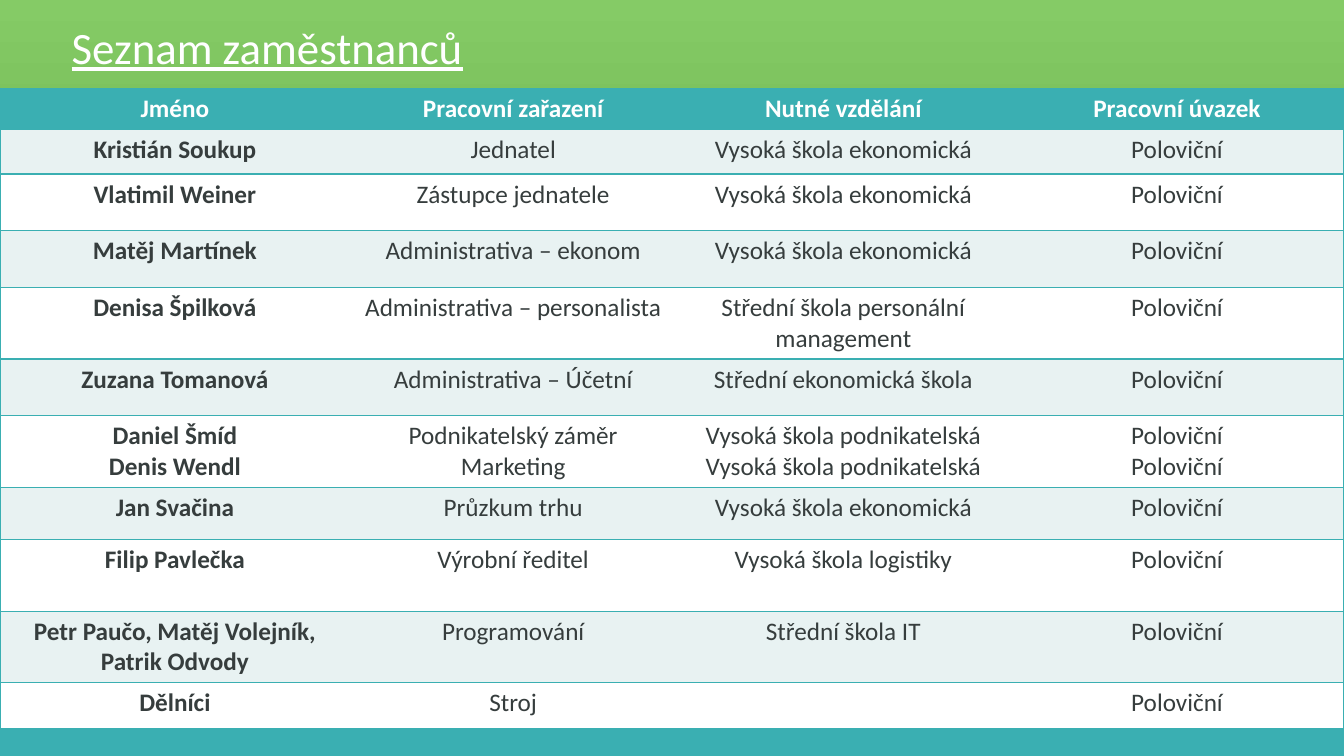
from copy import deepcopy
from lxml import etree
from pptx import Presentation, util as u
from pptx.dml import color as col
from pptx.enum import shapes, text
from pptx.oxml import ns

TEAL, PALE, WHITE, DARK = "3AAFB2", "E8F2F2", "FFFFFF", "363D3D"
EKO = "Vysoká škola ekonomická"
POD = "Vysoká škola podnikatelská"
HALF = "Poloviční"
HEAD = ("Jméno", "Pracovní zařazení", "Nutné vzdělání", "Pracovní úvazek")
STAFF = [
    (5.87, "Kristián Soukup", "Jednatel", EKO),
    (7.5, "Vlatimil Weiner", "Zástupce jednatele", EKO),
    (7.5, "Matěj Martínek", "Administrativa – ekonom", EKO),
    (9.47, "Denisa Špilková", "Administrativa – personalista",
     "Střední škola personální management"),
    (7.5, "Zuzana Tomanová", "Administrativa – Účetní", "Střední ekonomická škola"),
    (9.47, "Daniel Šmíd\nDenis Wendl", "Podnikatelský záměr\nMarketing", f"{POD}\n{POD}"),
    (6.93, "Jan Svačina", "Průzkum trhu", EKO),
    (9.47, "Filip Pavlečka", "Výrobní ředitel", "Vysoká škola logistiky"),
    (9.47, "Petr Paučo, Matěj Volejník, Patrik Odvody", "Programování", "Střední škola IT"),
    (6.13, "Dělníci", "Stroj", ""),
]


def paint(code):
    return col.RGBColor.from_string(code)


def write(frame, words, size=18, ink=DARK, bold=False, line=False, align="CENTER"):
    frame.text = words
    for para in frame.paragraphs:
        para.alignment = text.PP_ALIGN[align]
        font = para.font
        for run in para.runs:
            font = run.font
        font.name, font.size = "Calibri", u.Pt(size)
        font.bold, font.underline = bold, line
        font.color.rgb = paint(ink)


class Deck:
    def __init__(self, wide, high):
        self.prs = Presentation()
        self.prs.slide_width, self.prs.slide_height = u.Inches(wide), u.Inches(high)
        self.slide = self.prs.slides.add_slide(self.prs.slide_layouts[5])

    def x(self, share):
        return round(self.prs.slide_width * share / 100)

    def y(self, share):
        return round(self.prs.slide_height * share / 100)

    def box(self, left, top, wide, high):
        return self.x(left), self.y(top), self.x(wide), self.y(high)

    def ground(self, stops):
        fill = self.slide.background.fill
        fill.gradient()
        fill.gradient_angle = 270
        marks = self.slide.element.find(".//" + ns.qn("a:gsLst"))
        while len(marks) < len(stops):
            marks.append(deepcopy(marks[0]))
        for stop, (place, code) in zip(fill.gradient_stops, stops):
            stop.position, stop.color.rgb = place, paint(code)

    def bar(self, area, code):
        bar = self.slide.shapes.add_shape(shapes.MSO_SHAPE.RECTANGLE, *self.box(*area))
        bar.shadow.inherit = False
        bar.fill.solid()
        bar.fill.fore_color.rgb = paint(code)
        bar.line.fill.background()

    def title(self, area, words):
        head = self.slide.shapes.title
        head.left, head.top, head.width, head.height = self.box(*area)
        frame = head.text_frame
        write(frame, words, size=32, ink=WHITE, line=True, align="LEFT")
        frame.word_wrap = True
        frame.auto_size = text.MSO_AUTO_SIZE.SHAPE_TO_FIT_TEXT
        frame.vertical_anchor = text.MSO_ANCHOR.MIDDLE

    def edge(self, cell, sides):
        props = cell._tc.get_or_add_tcPr()
        for spot, side in enumerate("LRTB"):
            line = etree.Element(ns.qn(f"a:ln{side}"), w=str(u.Pt(1)))
            if side in sides:
                fill = etree.SubElement(line, ns.qn("a:solidFill"))
                etree.SubElement(fill, ns.qn("a:srgbClr"), val=TEAL)
            else:
                etree.SubElement(line, ns.qn("a:noFill"))
            props.insert(spot, line)

    def table(self, left, top, cols, rows, cells):
        area = self.box(left, top, sum(cols), sum(rows))
        table = self.slide.shapes.add_table(len(rows), len(cols), *area).table
        table.horz_banding = False
        for part, wide in zip(table.columns, cols):
            part.width = self.x(wide)
        for part, high in zip(table.rows, rows):
            part.height = self.y(high)
        last = len(cols) - 1
        for r, line in enumerate(cells):
            for c, words in enumerate(line):
                cell = table.cell(r, c)
                cell.fill.solid()
                shade = PALE if r % 2 else WHITE
                cell.fill.fore_color.rgb = paint(shade if r else TEAL)
                write(cell.text_frame, words, ink=DARK if r else WHITE,
                      bold=r == 0 or c == 0)
                self.edge(cell, "TB" + "L" * (c == 0) + "R" * (c == last))


def main():
    deck = Deck(13.33, 7.5)
    deck.ground([(0, "85CB66"), (0.5, "62A744"), (1, "49832F")])
    deck.bar((0, 96, 100, 4), TEAL)
    deck.title((4.58, 1.87, 85.67, 8.53), "Seznam zaměstnanců")
    rows = [5.47] + [high for high, *_ in STAFF]
    cells = [HEAD] + [(*line, HALF + ("\n" + HALF) * line[0].count("\n"))
                      for _, *line in STAFF]
    deck.table(0, 11.68, (26.03, 24.31, 24.83, 24.83), rows, cells)
    deck.prs.save("out.pptx")


if __name__ == "__main__":
    main()
